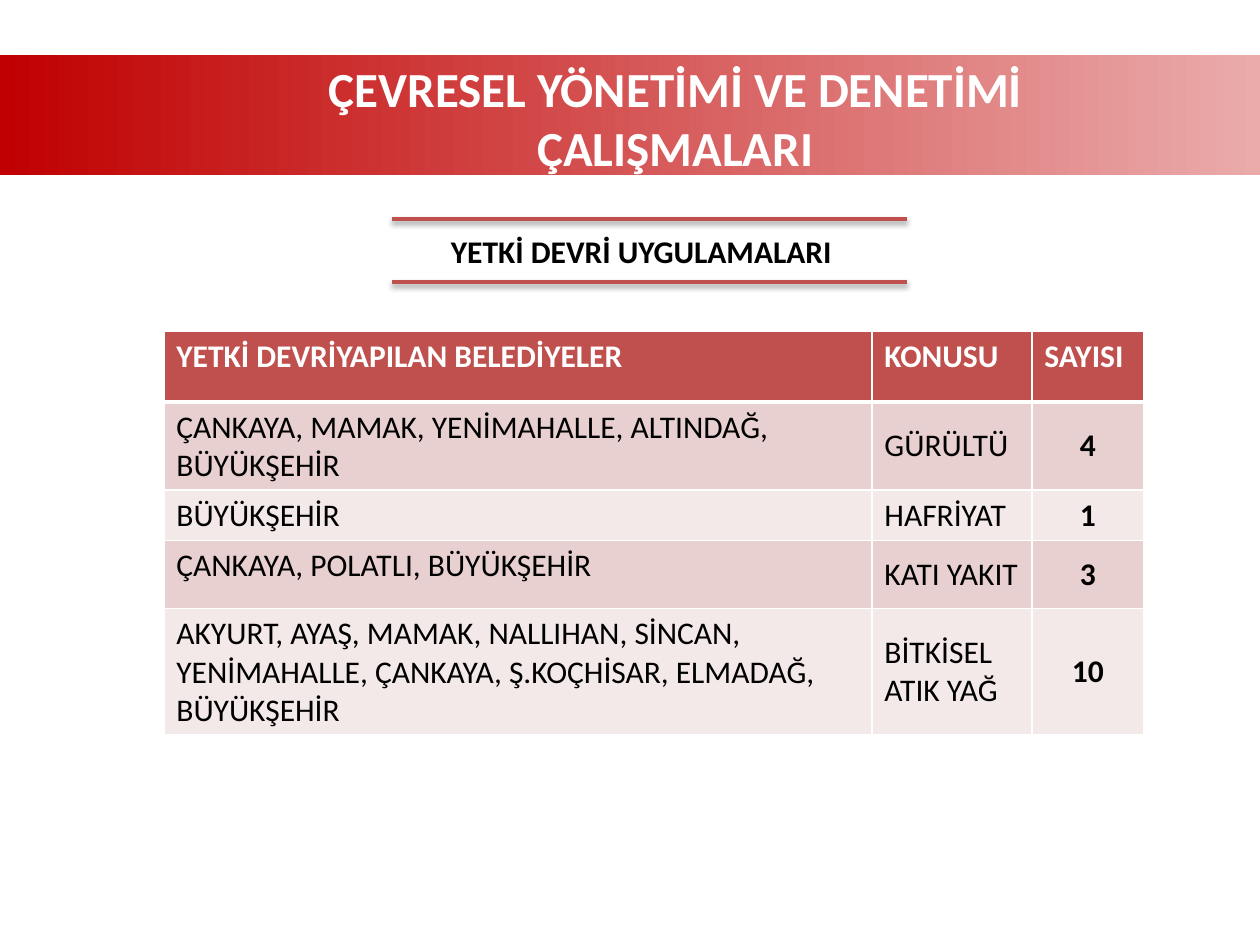
import pptx
import pptx.util
import pptx.dml.color
import pptx.enum.shapes
import pptx.enum.text
import pptx.oxml.ns
import lxml.etree

Inches, Pt = pptx.util.Inches, pptx.util.Pt
PP_ALIGN, ANCHOR = pptx.enum.text.PP_ALIGN, pptx.enum.text.MSO_ANCHOR
qn = pptx.oxml.ns.qn
RED, WHITE, BLACK = "C0504D", "FFFFFF", "000000"


def rgb(value):
    return pptx.dml.color.RGBColor.from_string(value)


def write(tf, text, size, color, bold, align=PP_ALIGN.LEFT):
    tf.text = text
    tf.word_wrap = True
    p = tf.paragraphs[0]
    p.alignment = align
    font = p.runs[0].font
    font.name, font.size, font.bold = "Calibri", Pt(size), bold
    font.color.rgb = rgb(color)


prs = pptx.Presentation()
prs.slide_width, prs.slide_height = Inches(10), Inches(7.5)
s = prs.slides.add_slide(prs.slide_layouts[6])

# Title band
band = s.shapes.add_shape(pptx.enum.shapes.MSO_SHAPE.RECTANGLE,
                          0, Inches(0.44), Inches(10), Inches(0.95))
band.shadow.inherit = False
band.line.fill.background()
band.fill.gradient()
band.fill.gradient_angle = 0
for stop, color in zip(band.fill.gradient_stops, ("C00000", "EBABAB")):
    stop.color.rgb = rgb(color)
band.fill.gradient_stops[0].position = 0
band.fill.gradient_stops[1].position = 1

title = s.shapes.add_textbox(Inches(2.09), Inches(0.08), Inches(6.54), Inches(1.7))
title.text_frame.vertical_anchor = ANCHOR.MIDDLE
write(title.text_frame, "ÇEVRESEL YÖNETİMİ VE DENETİMİ ÇALIŞMALARI", 28, WHITE, True,
      PP_ALIGN.CENTER)

subtitle = s.shapes.add_textbox(Inches(3.48), Inches(1.79), Inches(5.38), Inches(0.4))
write(subtitle.text_frame, "YETKİ DEVRİ UYGULAMALARI", 18, BLACK, True)

# Table of delegated powers
rows = [
    ("YETKİ DEVRİYAPILAN BELEDİYELER", "KONUSU", "SAYISI"),
    ("ÇANKAYA, MAMAK, YENİMAHALLE, ALTINDAĞ, BÜYÜKŞEHİR", "GÜRÜLTÜ", "4"),
    ("BÜYÜKŞEHİR", "HAFRİYAT", "1"),
    ("ÇANKAYA, POLATLI, BÜYÜKŞEHİR", "KATI YAKIT", "3"),
    ("AKYURT, AYAŞ, MAMAK, NALLIHAN, SİNCAN, YENİMAHALLE, ÇANKAYA, "
     "Ş.KOÇHİSAR, ELMADAĞ, BÜYÜKŞEHİR", "BİTKİSEL ATIK YAĞ", "10"),
]
widths = (5.62, 1.27, 0.89)
heights = (0.56, 0.69, 0.4, 0.54, 1)
table = s.shapes.add_table(len(rows), len(widths), Inches(1.3), Inches(2.63),
                           Inches(sum(widths)), Inches(sum(heights))).table
for column, width in zip(table.columns, widths):
    column.width = Inches(width)

for i, (values, height) in enumerate(zip(rows, heights)):
    table.rows[i].height = Inches(height)
    header = i == 0
    fill = RED if header else ("F4E9E9", "E8D0D0")[i % 2]
    for j, value in enumerate(values):
        cell = table.cell(i, j)
        count = j == 2 and not header
        write(cell.text_frame, value, 18, WHITE if header else BLACK, header or count,
              PP_ALIGN.CENTER if count else PP_ALIGN.LEFT)
        if j > 0 and not header:
            cell.vertical_anchor = ANCHOR.MIDDLE
        tcPr = cell._tc.get_or_add_tcPr()
        for side in ("lnL", "lnR", "lnT", "lnB"):
            thick = (side == "lnB" and i == 0) or (side == "lnT" and i == 1)
            ln = lxml.etree.SubElement(tcPr, qn(f"a:{side}"), w=str(Pt(3 if thick else 1)))
            solid = lxml.etree.SubElement(ln, qn("a:solidFill"))
            lxml.etree.SubElement(solid, qn("a:srgbClr"), val=WHITE)
        cell.fill.solid()
        cell.fill.fore_color.rgb = rgb(fill)

# Shadowed rules above and below the subtitle
for y in (1.74, 2.24):
    rule = s.shapes.add_connector(pptx.enum.shapes.MSO_CONNECTOR.STRAIGHT,
                                  Inches(3.11), Inches(y), Inches(7.2), Inches(y))
    rule.line.color.rgb = rgb(RED)
    rule.line.width = Pt(2)
    effects = lxml.etree.SubElement(rule._element.spPr, qn("a:effectLst"))
    shadow = lxml.etree.SubElement(effects, qn("a:outerShdw"), blurRad=str(Pt(3.1)),
                                   dist=str(Pt(1.6)), dir="5400000", rotWithShape="0")
    shade = lxml.etree.SubElement(shadow, qn("a:srgbClr"), val=BLACK)
    lxml.etree.SubElement(shade, qn("a:alpha"), val="38000")

prs.save("out.pptx")
